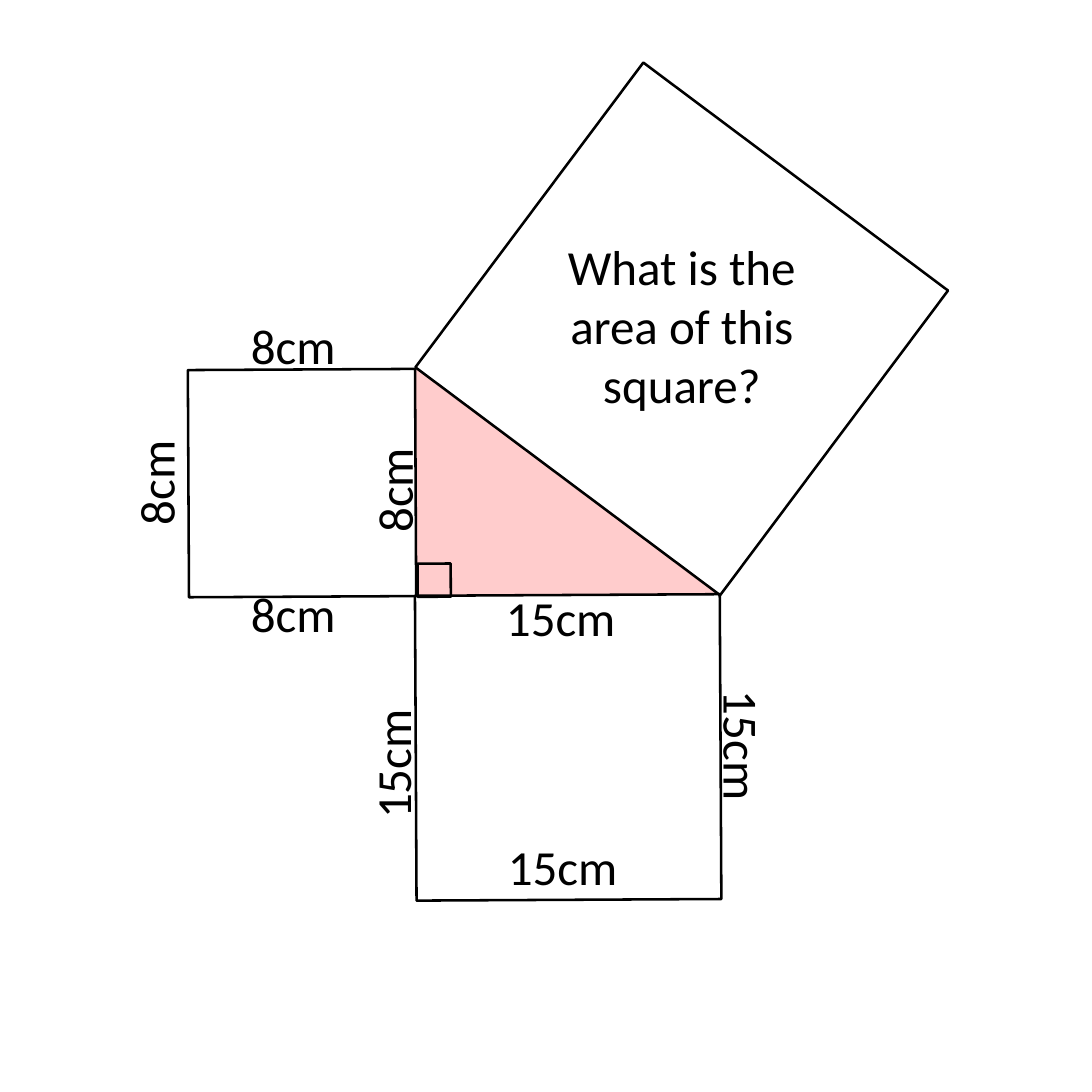
from pptx import Presentation
from pptx.dml.color import RGBColor
from pptx.enum import shapes, text
from pptx.util import Pt

BLACK = RGBColor(0, 0, 0)
PINK = RGBColor(255, 204, 204)
PX = 9144
SIDE = 591
FONT, SIZE, LINE = "Calibri", 19.1, 1
TILT = 359.7

TRIANGLE = (225, 199, 164, 123)
SQUARES = [
    (102, 200, 123, TILT),
    (266, 75, 206, 306.8),
    (225, 322, 165, TILT),
    (226, 305, 18, TILT),
]
ASK = ("What is the area of this square?", (284, 123, 170, 107))
HIGH = 42
WIDE = {"8cm": 66, "15cm": 80}
LABELS = [
    ("8cm", 126, 166, 0),
    ("8cm", 126, 311, 0),
    ("8cm", 51, 240, 270),
    ("8cm", 180, 244, 270),
    ("15cm", 172, 392, 270),
    ("15cm", 362, 383, 90),
    ("15cm", 265, 448, 0),
    ("15cm", 264, 313, 0),
]


def emu(box):
    return [n * PX for n in box]


def draw(slide, kind, box, turn=0, fill=None):
    form = slide.shapes.add_shape(kind, *emu(box))
    form.shadow.inherit = False
    form.rotation = turn
    if fill is None:
        form.fill.background()
        form.line.color.rgb = BLACK
        form.line.width = Pt(LINE)
    else:
        form.fill.solid()
        form.fill.fore_color.rgb = fill
        form.line.fill.background()


def write(slide, words, box, turn=0, wrap=False):
    area = slide.shapes.add_textbox(*emu(box))
    area.rotation = turn
    frame = area.text_frame
    frame.word_wrap = wrap
    frame.auto_size = text.MSO_AUTO_SIZE.SHAPE_TO_FIT_TEXT
    para = frame.paragraphs[0]
    para.alignment = text.PP_ALIGN.CENTER if wrap else text.PP_ALIGN.LEFT
    run = para.add_run()
    run.text = words
    run.font.name = FONT
    run.font.size = Pt(SIZE)
    run.font.color.rgb = BLACK


def main():
    """Build a right triangle with a square on each side."""
    deck = Presentation()
    deck.slide_width = deck.slide_height = SIDE * PX
    slide = deck.slides.add_slide(deck.slide_layouts[6])
    kinds = shapes.MSO_SHAPE
    draw(slide, kinds.RIGHT_TRIANGLE, TRIANGLE, fill=PINK)
    for left, top, size, turn in SQUARES:
        draw(slide, kinds.RECTANGLE, (left, top, size, size), turn)
    write(slide, *ASK, wrap=True)
    for words, left, top, turn in LABELS:
        write(slide, words, (left, top, WIDE[words], HIGH), turn)
    deck.save("out.pptx")


if __name__ == "__main__":
    main()
